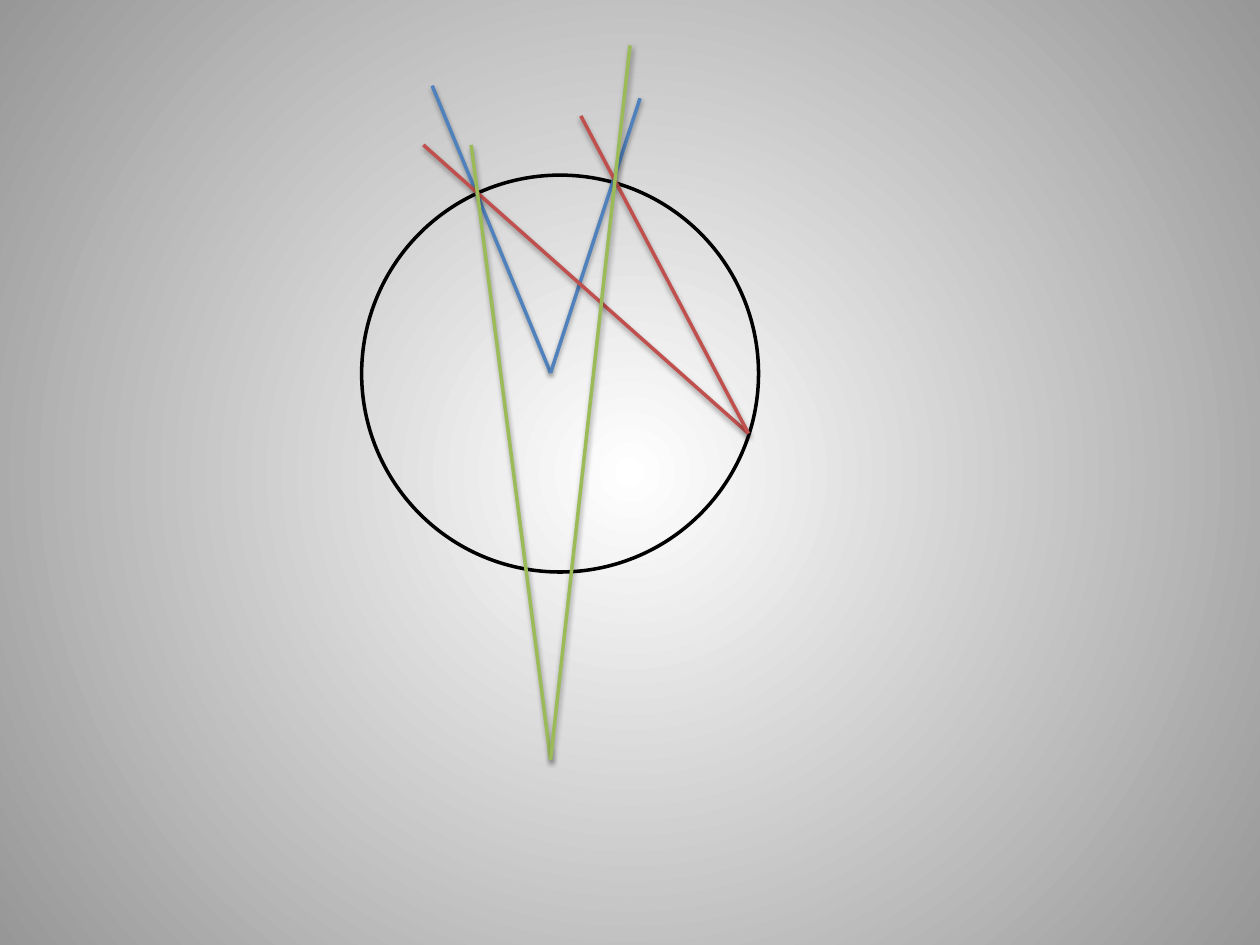
from dataclasses import dataclass

from lxml.etree import SubElement
from pptx import Presentation
from pptx.dml.color import RGBColor
from pptx.enum.shapes import MSO_CONNECTOR, MSO_SHAPE
from pptx.oxml.ns import qn
from pptx.slide import Slide
from pptx.util import Inches, Length, Pt

COLS, ROWS = 100, 75
CELL = Inches(10) / COLS
Point = tuple[float, float]  # column and row


@dataclass(frozen=True)
class Theme:
    centre: str = "FFFFFF"
    edge: str = "979797"
    circle: str = "000000"
    central: str = "4F81BD"
    inscribed: str = "C0504D"
    exterior: str = "9BBB59"
    shadow: str = "000000"
    line_width: Length = Pt(2)


@dataclass(frozen=True)
class Angle:
    vertex: Point
    ends: tuple[Point, Point]
    color: str


THEME = Theme()
CIRCLE_LEFT, CIRCLE_TOP, DIAMETER = 28.7, 13.9, 31.5
ANGLES = (
    Angle((43.7, 29.6), ((34.3, 6.8), (50.8, 7.8)), THEME.central),
    Angle((59.4, 34.4), ((33.6, 11.5), (46.1, 9.2)), THEME.inscribed),
    Angle((43.7, 60.3), ((37.4, 11.5), (50, 3.6)), THEME.exterior),
)


def grid(cells: float) -> Length:
    return Length(round(cells * CELL))


def paint_background(s: Slide) -> None:
    """Fill the slide with a gradient that spreads from its middle."""
    fill = s.background.fill
    fill.gradient()
    for stop, position, color in zip(fill.gradient_stops, (0, 1), (THEME.centre, THEME.edge)):
        stop.position = position
        stop.color.rgb = RGBColor.from_string(color)
    grad = s.element.find(".//" + qn("a:gradFill"))
    grad.remove(grad.find(qn("a:lin")))
    radial = SubElement(grad, qn("a:path"), {"path": "circle"})
    SubElement(radial, qn("a:fillToRect"), dict.fromkeys("ltrb", "50000"))


def draw_circle(s: Slide) -> None:
    size = grid(DIAMETER)
    sp = s.shapes.add_shape(MSO_SHAPE.OVAL, grid(CIRCLE_LEFT), grid(CIRCLE_TOP), size, size)
    sp.shadow.inherit = False
    sp.fill.background()
    sp.line.color.rgb = RGBColor.from_string(THEME.circle)
    sp.line.width = THEME.line_width


def draw_ray(s: Slide, start: Point, end: Point, color: str) -> None:
    ray = s.shapes.add_connector(MSO_CONNECTOR.STRAIGHT, *map(grid, start + end))
    ray.line.color.rgb = RGBColor.from_string(color)
    ray.line.width = THEME.line_width
    effects = SubElement(ray._element.spPr, qn("a:effectLst"))
    shadow = SubElement(effects, qn("a:outerShdw"), {
        "blurRad": str(Pt(3.1)), "dist": str(Pt(1.6)),
        "dir": "5400000", "rotWithShape": "0",
    })
    tint = SubElement(shadow, qn("a:srgbClr"), {"val": THEME.shadow})
    SubElement(tint, qn("a:alpha"), {"val": "38000"})


def main() -> None:
    prs = Presentation()
    prs.slide_width, prs.slide_height = grid(COLS), grid(ROWS)
    s = prs.slides.add_slide(prs.slide_layouts[6])
    paint_background(s)
    draw_circle(s)
    for angle in ANGLES:
        for end in angle.ends:
            draw_ray(s, end, angle.vertex, angle.color)
    prs.save("out.pptx")


if __name__ == "__main__":
    main()
